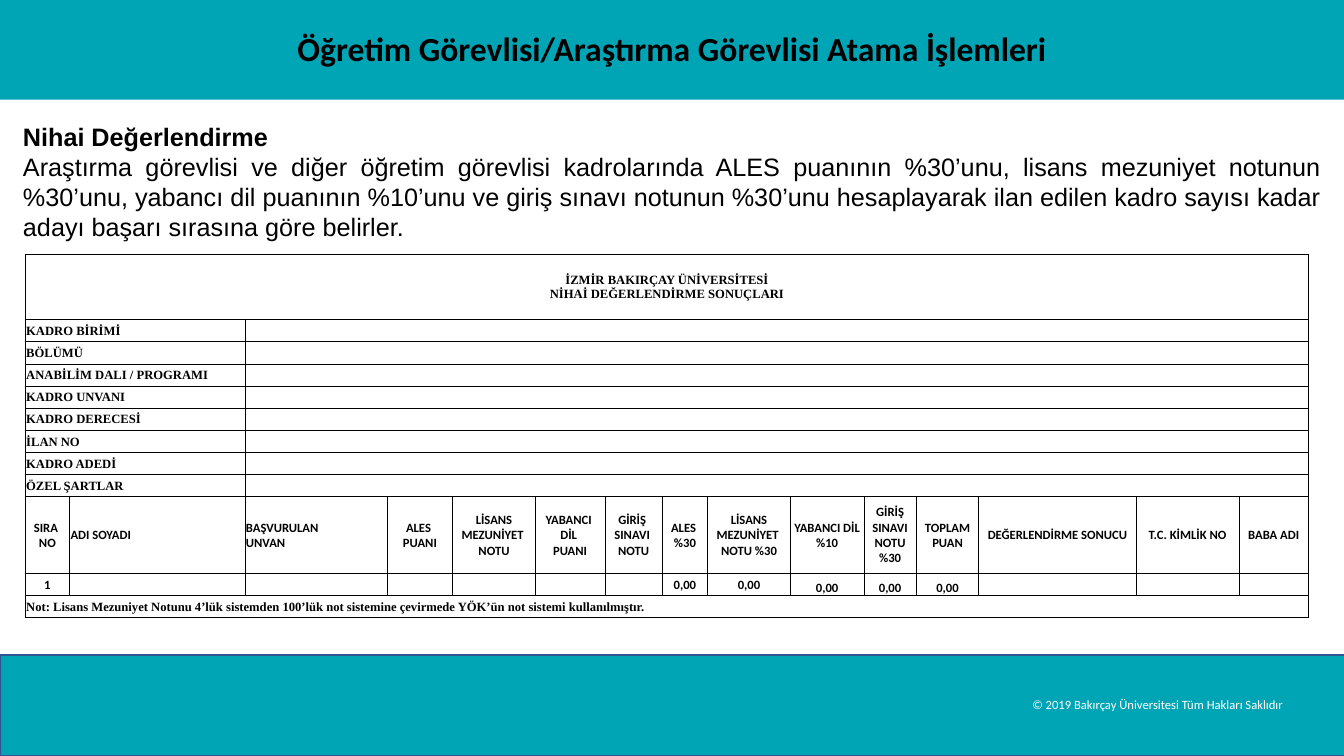
from lxml import etree
from pptx import Presentation
from pptx import util as u
from pptx.dml.color import RGBColor
from pptx.enum import shapes, text
from pptx.oxml.ns import qn

COLORS = {"teal": "00A5B5", "navy": "325491", "black": "000000", "white": "FFFFFF"}
CENTER, LEFT, JUSTIFY = text.PP_ALIGN.CENTER, text.PP_ALIGN.LEFT, text.PP_ALIGN.JUSTIFY
SERIF, SANS = "Times New Roman", "Calibri"

COL_WIDTHS = [0.44, 1.74, 1.41, 0.65, 0.82, 0.69, 0.57, 0.45,
              0.82, 0.73, 0.52, 0.62, 1.56, 1.02, 0.69]
FORM_FIELDS = ["KADRO BİRİMİ", "BÖLÜMÜ", "ANABİLİM DALI / PROGRAMI", "KADRO UNVANI",
               "KADRO DERECESİ", "İLAN NO", "KADRO ADEDİ", "ÖZEL ŞARTLAR"]
HEADERS = ["SIRA \nNO", "ADI SOYADI", "BAŞVURULAN \nUNVAN", "ALES \nPUANI",
           "LİSANS MEZUNİYET \nNOTU", "YABANCI \nDİL \nPUANI", "GİRİŞ \nSINAVI \nNOTU",
           "ALES \n%30", "LİSANS MEZUNİYET \nNOTU %30", "YABANCI DİL %10",
           "GİRİŞ SINAVI NOTU %30", "TOPLAM PUAN", "DEĞERLENDİRME SONUCU",
           "T.C. KİMLİK NO", "BABA ADI"]
SCORES = ["1"] + [""] * 6 + ["0,00"] * 5 + [""] * 3
TITLE_HEIGHT, HEADER_HEIGHT, ROW_HEIGHT = 0.65, 0.76, 0.22


def rgb(name):
    return RGBColor.from_string(COLORS[name])


class SlideBuilder:
    def __init__(self, prs):
        self.s = prs.slides.add_slide(prs.slide_layouts[6])

    def band(self, top, line=None):
        sp = self.s.shapes.add_shape(shapes.MSO_SHAPE.RECTANGLE, 0, u.Inches(top),
                                     u.Inches(13.35), u.Inches(1))
        sp.shadow.inherit = False
        sp.fill.solid()
        sp.fill.fore_color.rgb = rgb("teal")
        if line:
            sp.line.color.rgb = rgb(line)
            sp.line.width = u.Pt(1)
        else:
            sp.line.fill.background()

    def add_words(self, p, words, size, font, bold=False, color="black", align=LEFT):
        """Fill a paragraph, one run per line of words."""
        p.alignment = align
        for i, line in enumerate(words.split("\n")):
            if i:
                p.add_line_break()
            r = p.add_run()
            r.text = line
            r.font.size, r.font.name, r.font.bold = u.Pt(size), font, bold
            r.font.color.rgb = rgb(color)

    def text_box(self, left, top, width, height, wrap=True):
        tf = self.s.shapes.add_textbox(*map(u.Inches, (left, top, width, height))).text_frame
        tf.word_wrap = wrap
        return tf

    def table(self, left, top, widths, heights):
        frame = self.s.shapes.add_table(len(heights), len(widths), u.Inches(left), u.Inches(top),
                                        u.Inches(sum(widths)), u.Inches(sum(heights)))
        table = frame.table
        table.first_row = table.horz_banding = False
        for column, width in zip(table.columns, widths):
            column.width = u.Inches(width)
        for row, height in zip(table.rows, heights):
            row.height = u.Inches(height)
        for cell in table.iter_cells():
            self.plain_cell(cell)
        return table

    def plain_cell(self, cell):
        """Thin black borders, no fill, tight margins and a small empty line."""
        cell.margin_left = cell.margin_right = cell.margin_top = u.Inches(0.01)
        cell.margin_bottom = 0
        cell.vertical_anchor = text.MSO_ANCHOR.MIDDLE
        tc_pr = cell._tc.get_or_add_tcPr()
        for side in ("a:lnL", "a:lnR", "a:lnT", "a:lnB"):
            ln = etree.SubElement(tc_pr, qn(side), w=str(u.Pt(0.5)))
            fill = etree.SubElement(ln, qn("a:solidFill"))
            etree.SubElement(fill, qn("a:srgbClr"), val=COLORS["black"])
        cell.fill.background()
        etree.SubElement(cell.text_frame.paragraphs[0]._p, qn("a:endParaRPr"), sz="900")

    def cell_text(self, cell, words, font, align=LEFT):
        if words:
            self.add_words(cell.text_frame.paragraphs[0], words, 9, font, True, align=align)


def add_results_table(slide):
    heights = [TITLE_HEIGHT] + [ROW_HEIGHT] * len(FORM_FIELDS) + [HEADER_HEIGHT] + [ROW_HEIGHT] * 2
    table = slide.table(0.25, 2.52, COL_WIDTHS, heights)
    last_col, last_row = len(COL_WIDTHS) - 1, len(heights) - 1
    for row in (0, last_row):
        table.cell(row, 0).merge(table.cell(row, last_col))
    slide.cell_text(table.cell(0, 0), "İZMİR BAKIRÇAY ÜNİVERSİTESİ\nNİHAİ DEĞERLENDİRME SONUÇLARI",
                    SERIF, CENTER)
    for row, field in enumerate(FORM_FIELDS, 1):
        table.cell(row, 0).merge(table.cell(row, 1))
        table.cell(row, 2).merge(table.cell(row, last_col))
        slide.cell_text(table.cell(row, 0), field, SERIF)
    for col, (header, score) in enumerate(zip(HEADERS, SCORES)):
        slide.cell_text(table.cell(last_row - 2, col), header, SANS,
                        LEFT if col in (1, 2) else CENTER)
        score_cell = table.cell(last_row - 1, col)
        slide.cell_text(score_cell, score, SANS, CENTER)
        if 9 <= col <= 11:
            score_cell.vertical_anchor = text.MSO_ANCHOR.BOTTOM
    slide.cell_text(table.cell(last_row, 0),
                    "Not: Lisans Mezuniyet Notunu 4’lük sistemden 100’lük not sistemine "
                    "çevirmede YÖK’ün not sistemi kullanılmıştır.", SERIF)


def main():
    prs = Presentation()
    prs.slide_width, prs.slide_height = u.Inches(13.33), u.Inches(7.5)
    slide = SlideBuilder(prs)
    slide.band(6.5, "navy")
    slide.band(-0.01)

    p = slide.text_box(9.14, 6.88, 3.74, 0.24, wrap=False).paragraphs[0]
    p._p.get_or_add_pPr().set("marL", str(u.Inches(1)))
    p.line_spacing = 0.9
    slide.add_words(p, "© 2019 Bakırçay Üniversitesi Tüm Hakları Saklıdır", 9, SANS, color="white")

    title = slide.text_box(0, 0.23, 13.33, 0.5)
    slide.add_words(title.paragraphs[0], "Öğretim Görevlisi/Araştırma Görevlisi Atama İşlemleri",
                    24, SANS, True, align=CENTER)

    body = slide.text_box(0.13, 1.15, 13.07, 4.69)
    slide.add_words(body.paragraphs[0], "Nihai Değerlendirme", 18, "Arial", True, align=JUSTIFY)
    slide.add_words(body.add_paragraph(),
                    "Araştırma görevlisi ve diğer öğretim görevlisi kadrolarında ALES puanının "
                    "%30’unu, lisans mezuniyet notunun %30’unu, yabancı dil puanının %10’unu ve "
                    "giriş sınavı notunun %30’unu hesaplayarak ilan edilen kadro sayısı kadar "
                    "adayı başarı sırasına göre belirler.", 18, "Arial", align=JUSTIFY)
    add_results_table(slide)
    prs.save("out.pptx")


if __name__ == "__main__":
    main()
